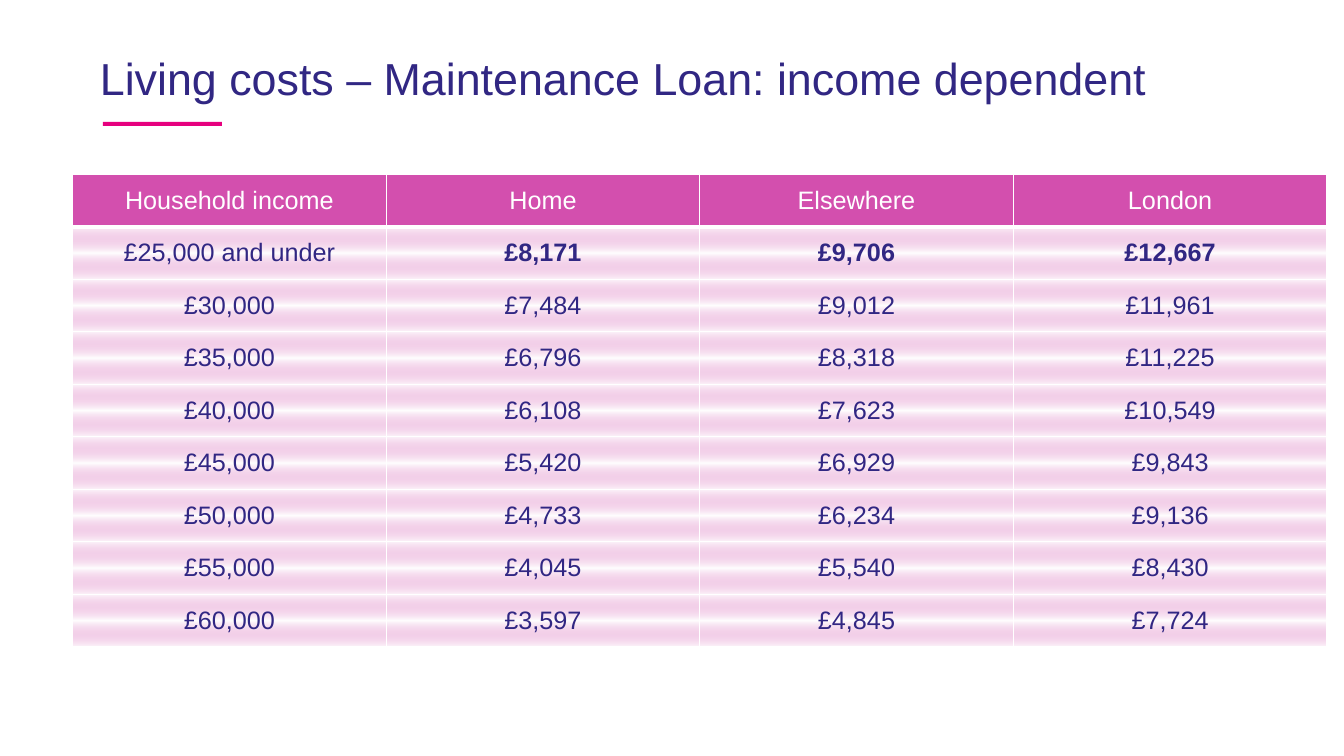
"""Build the slide on income-dependent Maintenance Loan amounts."""
import pptx
import pptx.dml.color
import pptx.enum.shapes
import pptx.enum.text
import pptx.oxml
import pptx.oxml.ns
import pptx.util

TITLE = "Living costs – Maintenance Loan: income dependent"
ROWS = [
    ("Household income", "Home", "Elsewhere", "London"),
    ("£25,000 and under", "£8,171", "£9,706", "£12,667"),
    ("£30,000", "£7,484", "£9,012", "£11,961"),
    ("£35,000", "£6,796", "£8,318", "£11,225"),
    ("£40,000", "£6,108", "£7,623", "£10,549"),
    ("£45,000", "£5,420", "£6,929", "£9,843"),
    ("£50,000", "£4,733", "£6,234", "£9,136"),
    ("£55,000", "£4,045", "£5,540", "£8,430"),
    ("£60,000", "£3,597", "£4,845", "£7,724"),
]
COLORS = {"navy": "312783", "rule": "E6007E", "pink": "D34FAE", "white": "FFFFFF"}
FONT = "Arial"
TITLE_BOX = (0.89, 0.38, 12.44, 0.71)
RULE_BOX = (1.02, 1.21, 1.18, 0.04)
TABLE_BOX = (0.72, 1.73, 12.44, 4.69)

Inches = pptx.util.Inches
Pt = pptx.util.Pt


def color(name):
    return pptx.dml.color.RGBColor.from_string(COLORS[name])


def style(para, size, name, bold=False):
    font = para.font
    font.name, font.size, font.bold = FONT, Pt(size), bold
    font.color.rgb = color(name)


def add_xml(props, body):
    tag, rest = body.split(" ", 1)
    space = pptx.oxml.ns.nsdecls("a")
    props.append(pptx.oxml.parse_xml(f"<a:{tag} {space} {rest}"))


def add_borders(props, head):
    for side in "LRTB":
        width = Pt(3 if head and side == "B" else 1)
        add_xml(props, f'ln{side} w="{width}"><a:solidFill>'
                f'<a:srgbClr val="{COLORS["white"]}"/></a:solidFill></a:ln{side}>')


def add_fade(props):
    stops = ""
    for pos, name, alpha in ((0, "pink", 5), (50, "white", 100), (100, "pink", 5)):
        stops += (f'<a:gs pos="{pos * 1000}"><a:srgbClr val="{COLORS[name]}">'
                  f'<a:alpha val="{alpha * 1000}"/></a:srgbClr></a:gs>')
    add_xml(props, f'gradFill rotWithShape="1"><a:gsLst>{stops}</a:gsLst>'
            '<a:lin ang="5400000" scaled="0"/></a:gradFill>')


def add_title(slide):
    title = slide.shapes.title
    title.left, title.top, title.width, title.height = map(Inches, TITLE_BOX)
    frame = title.text_frame
    frame.text = TITLE
    frame.word_wrap = True
    frame.auto_size = pptx.enum.text.MSO_AUTO_SIZE.NONE
    frame.vertical_anchor = pptx.enum.text.MSO_ANCHOR.BOTTOM
    para = frame.paragraphs[0]
    para.alignment = pptx.enum.text.PP_ALIGN.LEFT
    para.line_spacing = 0.9
    style(para, 32, "navy")


def add_rule(slide):
    kind = pptx.enum.shapes.MSO_SHAPE.RECTANGLE
    rule = slide.shapes.add_shape(kind, *map(Inches, RULE_BOX))
    rule.shadow.inherit = False
    rule.fill.solid()
    rule.fill.fore_color.rgb = color("rule")
    rule.line.fill.background()


def add_loans(slide):
    box = map(Inches, TABLE_BOX)
    table = slide.shapes.add_table(len(ROWS), len(ROWS[0]), *box).table
    for r, row in enumerate(ROWS):
        for c, text in enumerate(row):
            cell = table.cell(r, c)
            cell.text = text
            cell.vertical_anchor = pptx.enum.text.MSO_ANCHOR.MIDDLE
            para = cell.text_frame.paragraphs[0]
            para.alignment = pptx.enum.text.PP_ALIGN.CENTER
            style(para, 18, "navy" if r else "white", r == 1 and c > 0)
            props = cell._tc.get_or_add_tcPr()
            add_borders(props, r == 0)
            if r:
                add_fade(props)
            else:
                cell.fill.solid()
                cell.fill.fore_color.rgb = color("pink")


def main():
    deck = pptx.Presentation()
    deck.slide_width, deck.slide_height = Inches(13.33), Inches(7.5)
    slide = deck.slides.add_slide(deck.slide_layouts[5])
    add_title(slide)
    add_rule(slide)
    add_loans(slide)
    deck.save("out.pptx")


if __name__ == "__main__":
    main()
